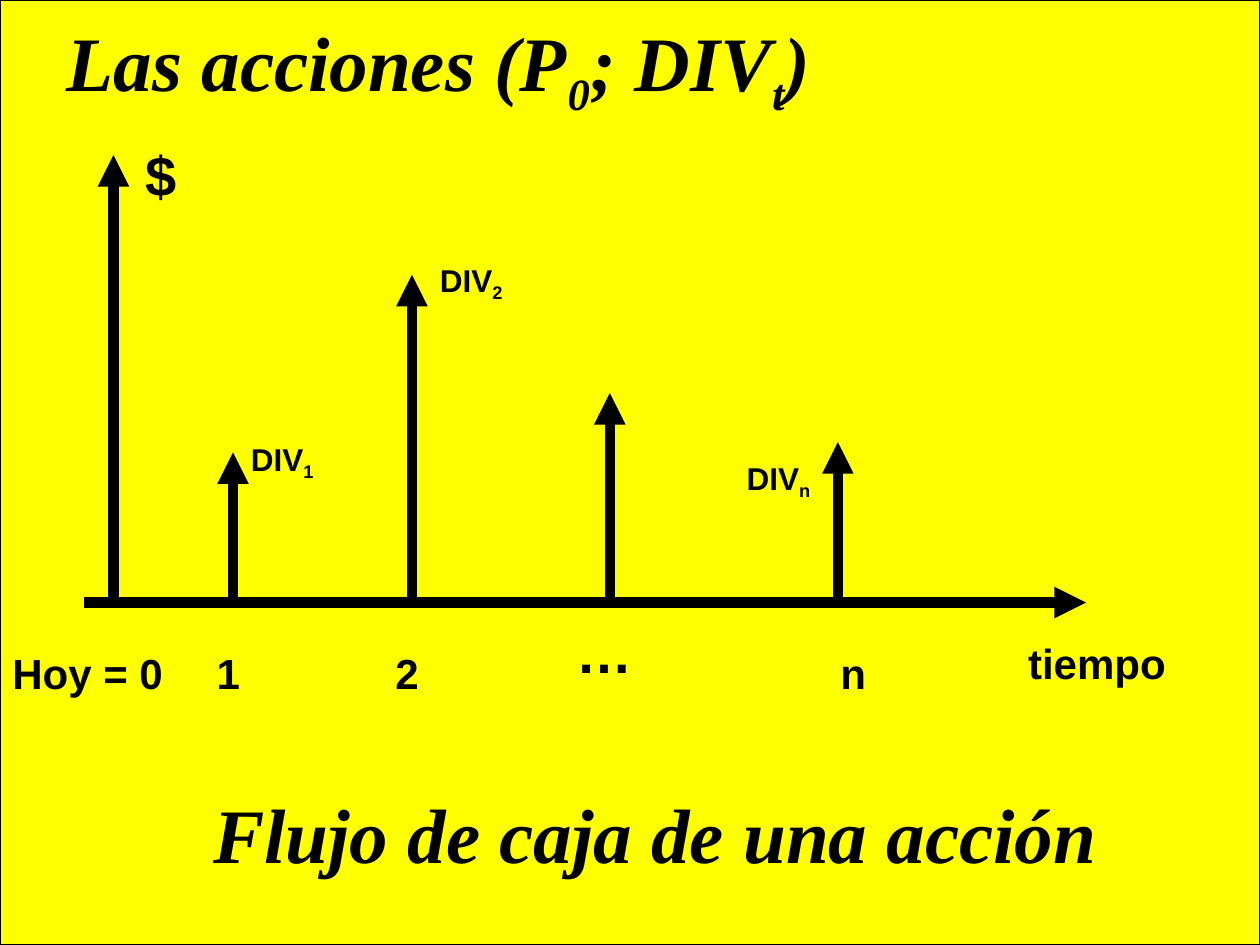
from lxml.etree import SubElement
from pptx import Presentation
from pptx.dml.color import RGBColor
from pptx.enum.shapes import MSO_CONNECTOR, MSO_SHAPE
from pptx.enum.text import MSO_ANCHOR, MSO_AUTO_SIZE, PP_ALIGN
from pptx.oxml.ns import qn
from pptx.util import Pt

# Content: a run is (text, is subscript); lengths are in points
WIDE, HIGH = 720, 540
INK, PAPER = "000000", "FFFF00"
LEFT, MID, RIGHT = PP_ALIGN.LEFT, PP_ALIGN.CENTER, PP_ALIGN.RIGHT
SANS, SERIF = "Arial", "Times New Roman"

TITLE = [("Las acciones (P", False), ("0", True), ("; DIV", False),
         ("t", True), (")", False)]

# Time axis, then each upright arrow as (x, top)
BASE = 344.3
AXIS = (48.2, 620.6)
FLOWS = [(64.8, 88.6), (133.2, 258.5), (235.4, 157), (348.5, 224.6),
         (478.8, 252.7)]

# Dividend labels: left, top, subscript, alignment
DIVS = [(115.9, 247.7, "1", MID), (223.9, 145.4, "2", MID),
        (382.3, 258.5, "n ", RIGHT)]

# Other labels: text, left, top, width, height, size, alignment, font
ROW = 366.5
LABELS = [
    ("Hoy = 0", 0, ROW, 105, 36, 24, LEFT, SANS),
    ("1", 99.4, ROW, 62, 36, 24, MID, SANS),
    ("2", 201.6, ROW, 62, 36, 24, MID, SANS),
    ("…", 314.6, 349.2, 62, 45.4, 32, MID, SANS),
    ("n", 456.5, ROW, 62, 36, 24, MID, SANS),
    ("tiempo", 553, 360.7, 147.6, 36, 24, MID, SANS),
    ("$", 76.3, 77, 62, 45.4, 32, LEFT, SANS),
    ("Flujo de caja de una acción", 105.1, 445.7, 538.6, 60.5, 44, MID, SERIF),
]


def tint(code):
    return RGBColor.from_string(code)


def write(frame, runs, size, align, face):
    frame.word_wrap = True
    frame.auto_size = MSO_AUTO_SIZE.NONE
    para = frame.paragraphs[0]
    para.alignment = align
    for text, sub in runs:
        run = para.add_run()
        run.text = text
        font = run.font
        font.name, font.size, font.bold = face, Pt(size), True
        font.italic = face == SERIF
        font.color.rgb = tint(INK)
        if sub:
            run._r.get_or_add_rPr().set("baseline", "-25000")


def label(runs, x, y, w, h, size, align, face):
    box = slide.shapes.add_textbox(Pt(x), Pt(y), Pt(w), Pt(h))
    write(box.text_frame, runs, size, align, face)


def arrow(x1, y1, x2, y2):
    link = slide.shapes.add_connector(
        MSO_CONNECTOR.STRAIGHT, Pt(x1), Pt(y1), Pt(x2), Pt(y2))
    link.line.color.rgb = tint(INK)
    link.line.width = Pt(6)
    SubElement(link.line._get_or_add_ln(), qn("a:tailEnd"), type="triangle")
    SubElement(link.element.spPr, qn("a:effectLst"))


deck = Presentation()
deck.slide_width, deck.slide_height = Pt(WIDE), Pt(HIGH)
slide = deck.slides.add_slide(deck.slide_layouts[5])

# Title
title = slide.shapes.title
title.left, title.top, title.width, title.height = Pt(31), Pt(0), Pt(648), Pt(76.3)
title.text_frame.vertical_anchor = MSO_ANCHOR.MIDDLE
write(title.text_frame, TITLE, 44, LEFT, SERIF)

# Framed panel behind the title
panel = slide.shapes.add_shape(MSO_SHAPE.RECTANGLE, 0, 0, Pt(WIDE), Pt(HIGH))
panel.shadow.inherit = False
panel.fill.solid()
panel.fill.fore_color.rgb = tint(PAPER)
panel.line.color.rgb = tint(INK)
panel.line.width = Pt(0.75)
title.element.addprevious(panel.element)

# Axis and cash flows
arrow(AXIS[0], BASE, AXIS[1], BASE)
for x, top in FLOWS:
    arrow(x, BASE, x, top)

# Labels
for x, y, sub, align in DIVS:
    label([("DIV", False), (sub, True)], x, y, 90.7, 28.8, 18, align, SANS)
for text, *rest in LABELS:
    label([(text, False)], *rest)

deck.save("out.pptx")
